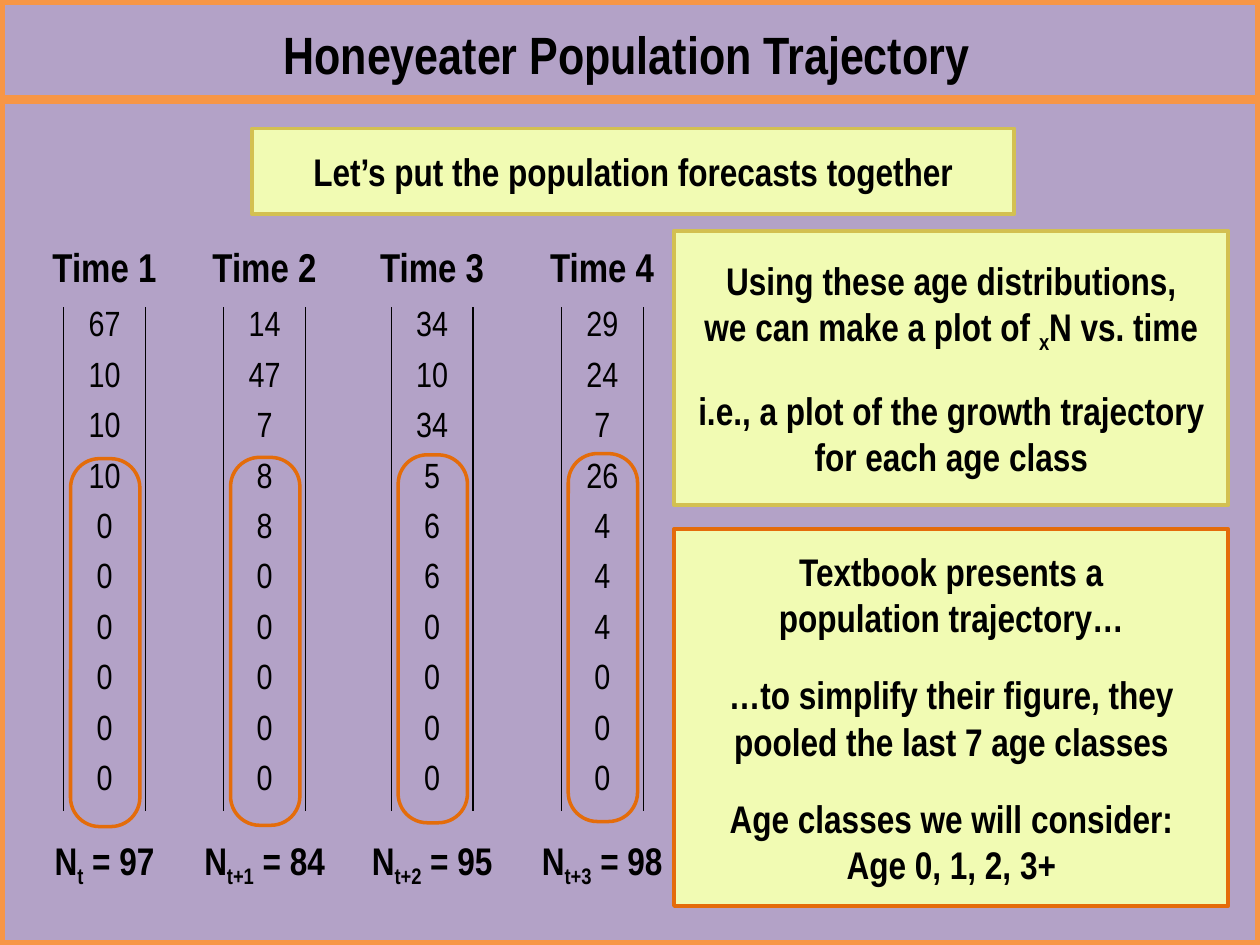
"""Build the honeyeater population trajectory slide."""
from dataclasses import dataclass

from lxml import etree
from pptx import Presentation
from pptx.dml.color import RGBColor
from pptx.enum.shapes import MSO_CONNECTOR, MSO_SHAPE
from pptx.enum.text import MSO_ANCHOR, PP_ALIGN
from pptx.oxml.ns import qn
from pptx.util import Inches, Pt

CENTER = PP_ALIGN.CENTER
MIDDLE = MSO_ANCHOR.MIDDLE
RECTANGLE = MSO_SHAPE.RECTANGLE
ROUNDED = MSO_SHAPE.ROUNDED_RECTANGLE
STRAIGHT = MSO_CONNECTOR.STRAIGHT

FONT = "Arial Narrow"
COLORS = {
    "background": "B3A2C7",
    "frame": "F79646",
    "note": "F1FBB3",
    "gold": "D3C051",
    "orange": "E46C0A",
    "text": "000000",
}
COLUMN_WIDTH = 0.65
ROW_HEIGHT = 0.4
TABLE_TOP = 2.44
PARAGRAPH_GAP = 18


@dataclass
class AgeColumn:
    center: float
    heading: str
    counts: list[int]
    total: str
    pool_top: float


@dataclass
class Note:
    left: float
    top: float
    width: float
    height: float
    border: str
    blocks: list[list[str]]


AGE_COLUMNS = [
    AgeColumn(0.83, "Time 1", [67, 10, 10, 10, 0, 0, 0, 0, 0, 0], "N|t| = 97", 3.64),
    AgeColumn(2.1, "Time 2", [14, 47, 7, 8, 8, 0, 0, 0, 0, 0], "N|t+1| = 84", 3.63),
    AgeColumn(3.43, "Time 3", [34, 10, 34, 5, 6, 6, 0, 0, 0, 0], "N|t+2| = 95", 3.61),
    AgeColumn(4.78, "Time 4", [29, 24, 7, 26, 4, 4, 4, 0, 0, 0], "N|t+3| = 98", 3.6),
]
NOTES = [
    Note(2, 1.02, 6.05, 0.68, "gold", [["Let’s put the population forecasts together"]]),
    Note(5.35, 1.83, 4.4, 2.18, "gold", [
        ["Using these age distributions,", "we can make a plot of |x|N vs. time"],
        ["i.e., a plot of the growth trajectory for each age class"],
    ]),
    Note(5.35, 4.2, 4.4, 2.99, "orange", [
        ["Textbook presents a", "population trajectory…"],
        ["…to simplify their figure, they pooled the last 7 age classes"],
        ["Age classes we will consider:", "Age 0, 1, 2, 3+"],
    ]),
]


def rgb(name: str) -> RGBColor:
    return RGBColor.from_string(COLORS[name])


def write(paragraph, text: str, size: float, bold: bool = True) -> None:
    """Fill a centred paragraph; text between bars is set as a subscript."""
    for index, part in enumerate(text.split("|")):
        run = paragraph.add_run()
        run.text = part
        if index % 2:
            run._r.get_or_add_rPr().set("baseline", "-25000")
    paragraph.alignment = CENTER
    paragraph.font.name = FONT
    paragraph.font.size = Pt(size)
    paragraph.font.bold = bold
    paragraph.font.color.rgb = rgb("text")


def add_outline(slide, kind, left: float, top: float, width: float, height: float,
                color: str, weight: float):
    shape = slide.shapes.add_shape(
        kind, Inches(left), Inches(top), Inches(width), Inches(height))
    shape.shadow.inherit = False
    shape.fill.background()
    shape.line.color.rgb = rgb(color)
    shape.line.width = Pt(weight)
    return shape


def add_frame(slide) -> None:
    add_outline(slide, RECTANGLE, 0, 0, 10, 7.5, "frame", 6)
    divider = slide.shapes.add_connector(
        STRAIGHT, Inches(0), Inches(0.79), Inches(10), Inches(0.79))
    divider.line.color.rgb = rgb("frame")
    divider.line.width = Pt(5)
    etree.SubElement(divider._element.spPr, qn("a:effectLst"))


def add_title(slide, text: str) -> None:
    title = slide.shapes.title
    title.left, title.top = Inches(0.74), Inches(0.12)
    title.width, title.height = Inches(8.47), Inches(0.61)
    title.text_frame.vertical_anchor = MIDDLE
    write(title.text_frame.paragraphs[0], text, 30)


def add_note(slide, note: Note) -> None:
    box = add_outline(slide, RECTANGLE, note.left, note.top, note.width, note.height,
                      note.border, 2.25)
    box.fill.solid()
    box.fill.fore_color.rgb = rgb("note")
    frame = box.text_frame
    frame.word_wrap = True
    frame.vertical_anchor = MIDDLE
    frame.margin_left = frame.margin_right = Inches(0.13)
    paragraph = frame.paragraphs[0]
    for block_index, block in enumerate(note.blocks):
        for line_index, line in enumerate(block):
            if block_index or line_index:
                paragraph = frame.add_paragraph()
            if block_index and not line_index:
                paragraph.space_before = Pt(PARAGRAPH_GAP)
            write(paragraph, line, 22)


def add_label(slide, center: float, top: float, width: float, text: str,
              size: float) -> None:
    label = slide.shapes.add_textbox(
        Inches(center - width / 2), Inches(top), Inches(width), Inches(0.49))
    label.text_frame.word_wrap = True
    write(label.text_frame.paragraphs[0], text, size)


def set_side_borders(cell) -> None:
    properties = cell._tc.get_or_add_tcPr()
    for tag in ("a:lnL", "a:lnR", "a:lnT", "a:lnB"):
        border = etree.SubElement(properties, qn(tag), w=str(Pt(1)))
        if tag in ("a:lnL", "a:lnR"):
            fill = etree.SubElement(border, qn("a:solidFill"))
            etree.SubElement(fill, qn("a:srgbClr"), val=COLORS["text"])
        else:
            etree.SubElement(border, qn("a:noFill"))


def add_counts(slide, column: AgeColumn) -> None:
    rows = len(column.counts)
    table = slide.shapes.add_table(
        rows, 1, Inches(column.center - COLUMN_WIDTH / 2), Inches(TABLE_TOP),
        Inches(COLUMN_WIDTH), Inches(ROW_HEIGHT * rows)).table
    table.first_row = table.horz_banding = False
    for row, count in enumerate(column.counts):
        cell = table.cell(row, 0)
        set_side_borders(cell)
        cell.fill.background()
        cell.margin_left = cell.margin_right = Inches(0.03)
        cell.margin_top = cell.margin_bottom = Inches(0.03)
        write(cell.text_frame.paragraphs[0], str(count), 20, bold=False)


def add_age_column(slide, column: AgeColumn) -> None:
    add_label(slide, column.center, 1.87, 1.17, column.heading, 23)
    add_counts(slide, column)
    add_label(slide, column.center, 6.59, 1.67, column.total, 22)
    pool = add_outline(slide, ROUNDED, column.center - 0.27, column.pool_top, 0.55, 2.92,
                       "orange", 2)
    pool.adjustments[0] = 0.42


def main() -> None:
    presentation = Presentation()
    presentation.slide_width, presentation.slide_height = Inches(10), Inches(7.5)
    slide = presentation.slides.add_slide(presentation.slide_layouts[5])
    slide.background.fill.solid()
    slide.background.fill.fore_color.rgb = rgb("background")
    add_frame(slide)
    add_title(slide, "Honeyeater Population Trajectory")
    for column in AGE_COLUMNS:
        add_age_column(slide, column)
    for note in NOTES:
        add_note(slide, note)
    presentation.save("out.pptx")


if __name__ == "__main__":
    main()
